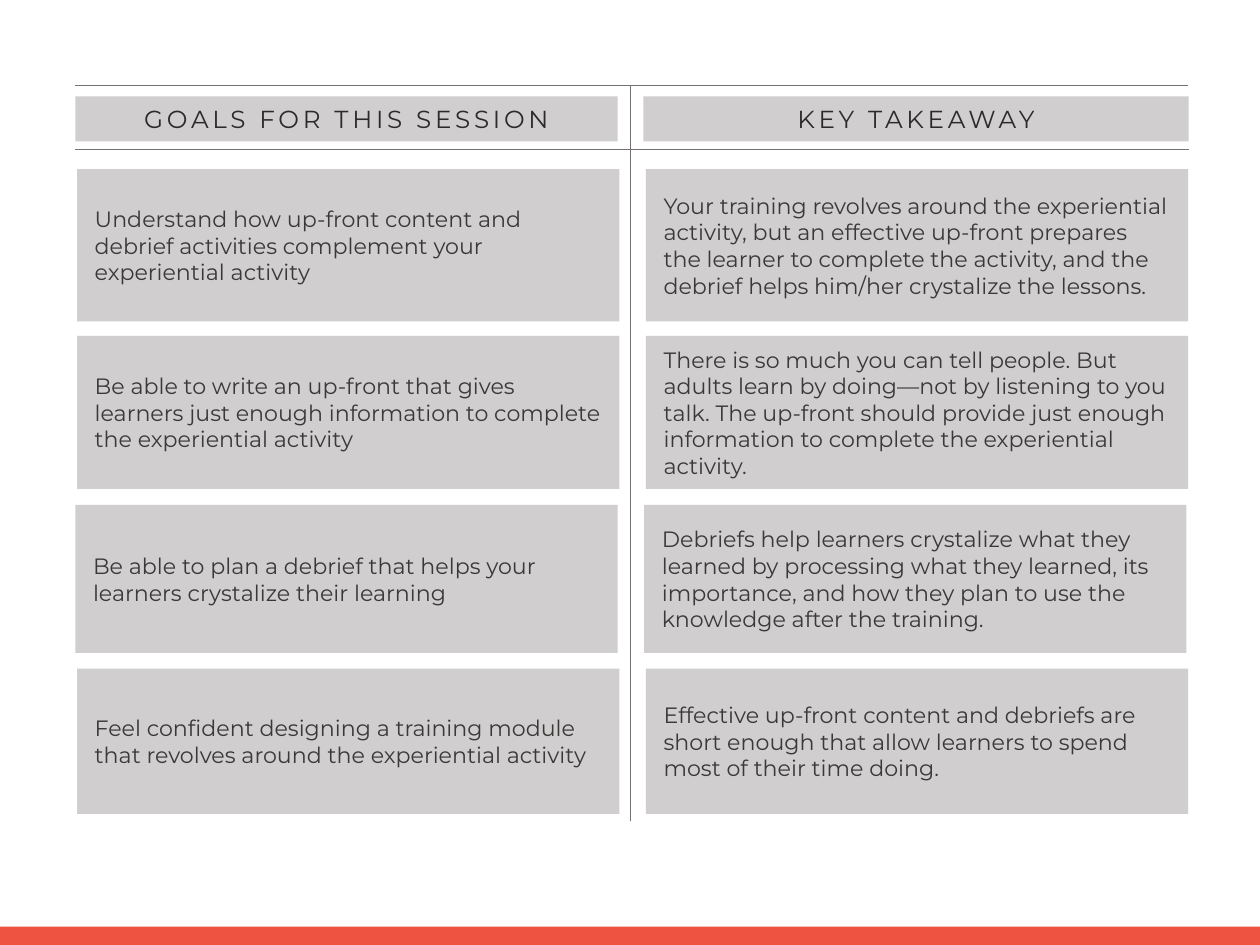
from pptx import Presentation
from pptx.dml.color import RGBColor
from pptx.enum.shapes import MSO_CONNECTOR, MSO_SHAPE
from pptx.enum.text import MSO_ANCHOR, PP_ALIGN
from pptx.oxml.ns import qn
from pptx.util import Pt
from lxml import etree

RECTANGLE = MSO_SHAPE.RECTANGLE
STRAIGHT = MSO_CONNECTOR.STRAIGHT
MIDDLE = MSO_ANCHOR.MIDDLE
LEFT, CENTER = PP_ALIGN.LEFT, PP_ALIGN.CENTER

COLORS = {
    "accent": "ED5340",
    "panel": "D0CECE",
    "rule": "767171",
    "heading": "2C2A2A",
    "body": "3B3838",
}
FONT = "Montserrat"

GOAL_X, TAKEAWAY_X = 62.6, 524.9
PANEL_WIDTH = 440.7

# Top, height and sideways shift of a row, then its goal and its takeaway
ROWS = [
    (137.5, 123.8, 0,
     "Understand how up-front content and debrief activities complement "
     "your experiential activity",
     "Your training revolves around the experiential activity, but an "
     "effective up-front prepares the learner to complete the activity, and "
     "the debrief helps him/her crystalize the lessons."),
    (272.9, 124.5, 0,
     "Be able to write an up-front that gives learners just enough "
     "information to complete the experiential activity",
     "There is so much you can tell people. But adults learn by doing—not by "
     "listening to you talk. The up-front should provide just enough "
     "information to complete the experiential activity."),
    (410.4, 120.2, -1.4,
     "Be able to plan a debrief that helps your learners crystalize their "
     "learning",
     "Debriefs help learners crystalize what they learned by processing what "
     "they learned, its importance, and how they plan to use the knowledge "
     "after the training."),
    (543.4, 118.1, 0,
     "Feel confident designing a training module that revolves around the "
     "experiential activity",
     "Effective up-front content and debriefs are short enough that allow "
     "learners to spend most of their time doing."),
]


def write(frame, text, size=18, color="body", align=LEFT, spacing=0):
    paragraph = frame.paragraphs[0]
    paragraph.alignment = align
    run = paragraph.add_run()
    run.text = text
    run.font.name = FONT
    run.font.size = Pt(size)
    run.font.color.rgb = RGBColor.from_string(COLORS[color])
    if spacing:
        run._r.get_or_add_rPr().set("spc", str(spacing * 100))


class SlideBuilder:
    def __init__(self, slide):
        self.slide = slide

    def block(self, x, y, width, height, fill="panel"):
        shape = self.slide.shapes.add_shape(
            RECTANGLE, Pt(x), Pt(y), Pt(width), Pt(height))
        shape.shadow.inherit = False
        shape.fill.solid()
        shape.fill.fore_color.rgb = RGBColor.from_string(COLORS[fill])
        shape.line.fill.background()
        return shape

    def panel(self, x, y, width, height, text, inset=14.4, **text_format):
        frame = self.block(x, y, width, height).text_frame
        frame.word_wrap = True
        frame.vertical_anchor = MIDDLE
        frame.margin_left = frame.margin_right = Pt(inset)
        frame.margin_top = frame.margin_bottom = Pt(7.2)
        write(frame, text, **text_format)

    def heading(self, x, width, text):
        self.panel(x, 78.3, width, 36.7, text, inset=7.2, size=20,
                   color="heading", align=CENTER, spacing=3)

    def rule(self, x1, y1, x2, y2):
        line = self.slide.shapes.add_connector(
            STRAIGHT, Pt(x1), Pt(y1), Pt(x2), Pt(y2))
        line.line.color.rgb = RGBColor.from_string(COLORS["rule"])
        line.line.width = Pt(1)
        etree.SubElement(line._element.spPr, qn("a:effectLst"))


def main():
    deck = Presentation()
    deck.slide_width, deck.slide_height = Pt(1024), Pt(768)
    builder = SlideBuilder(deck.slides.add_slide(deck.slide_layouts[6]))

    # Footer band
    builder.block(0, 753, 1024, 15, fill="accent")

    # Rules around the headings and between the columns
    builder.rule(61, 69.2, 965.5, 69.2)
    builder.rule(61, 121.5, 966.2, 121.5)
    builder.rule(512.5, 667.6, 512.5, 69.2)

    # Column headings
    builder.heading(61.2, PANEL_WIDTH, "GOALS FOR THIS SESSION")
    builder.heading(523, 443, "KEY TAKEAWAY")

    # Goals beside their takeaways
    for top, height, shift, goal, takeaway in ROWS:
        builder.panel(GOAL_X + shift, top, PANEL_WIDTH, height, goal)
        builder.panel(TAKEAWAY_X + shift, top, PANEL_WIDTH, height, takeaway)

    deck.save("out.pptx")


if __name__ == "__main__":
    main()
